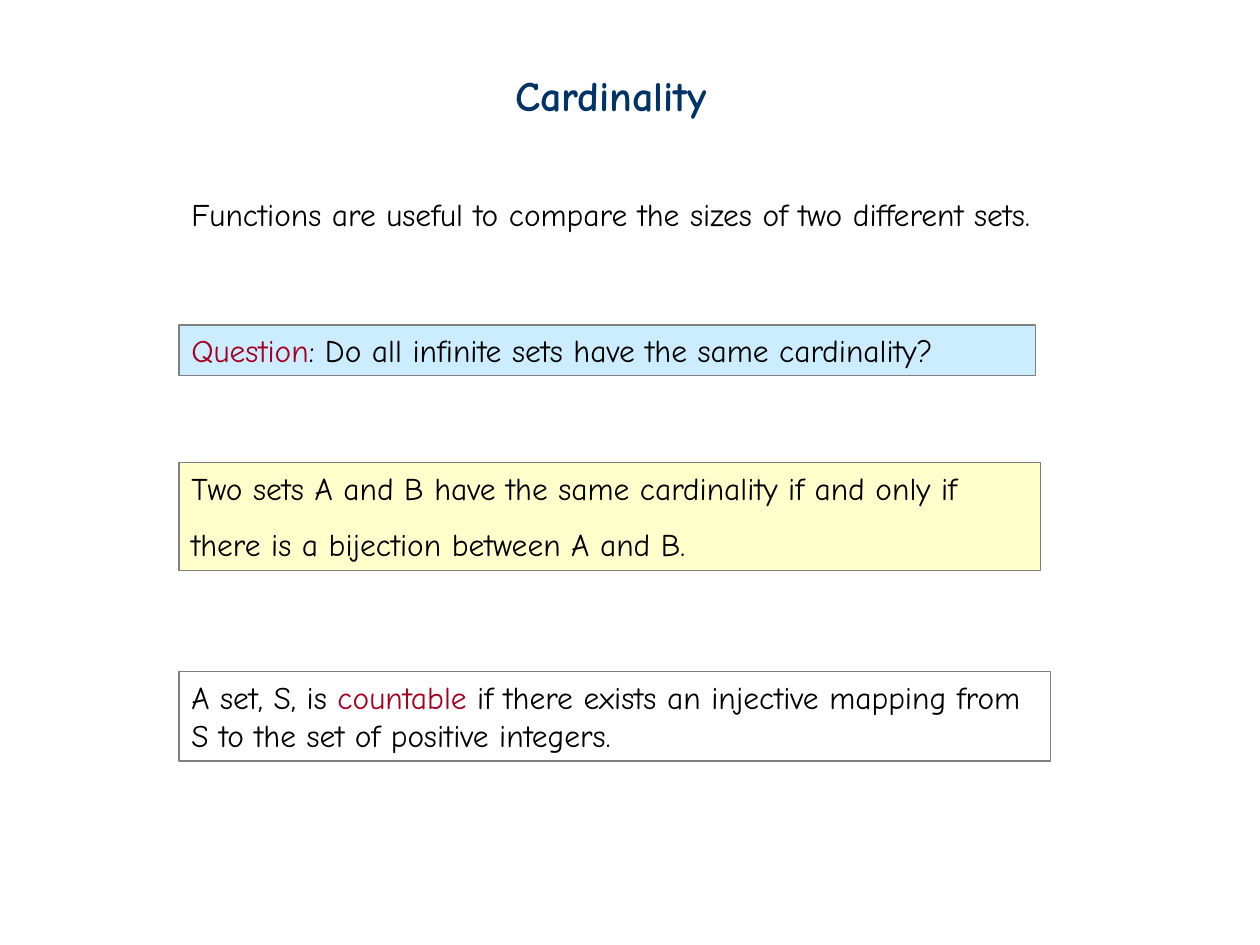
from pptx import Presentation
from pptx.dml.color import RGBColor
from pptx.enum.shapes import MSO_SHAPE as Shape
from pptx.enum.text import MSO_ANCHOR as Anchor, MSO_AUTO_SIZE as AutoSize, PP_ALIGN as Align
from pptx.util import Inches, Pt

NAVY, RED, BLACK, GRAY = "003366", "A50021", "000000", "808080"
LEFT = 1.42
TITLE = [[("Cardinality", NAVY)]]
INTRO = [[("Functions are useful to compare the sizes of two different sets.", BLACK)]]
STATEMENTS = [
    {"top": 2.58, "size": (6.8, 0.4), "fill": "CCECFF", "lines": [
        [("Question", RED), (": Do all infinite sets have the same cardinality?", BLACK)]]},
    {"top": 3.67, "size": (6.84, 0.86), "fill": "FFFFCC", "lines": [
        [("Two sets A and B have the same cardinality if and only if", BLACK)],
        [("there is a bijection between A and B.", BLACK)]]},
    {"top": 5.33, "size": (6.92, 0.71), "fill": None, "lines": [
        [("A set, S, is ", BLACK), ("countable", RED),
         (" if there exists an injective mapping from S to the set of positive integers.", BLACK)]]},
]
FRAME = {"word_wrap": True, "auto_size": AutoSize.NONE, "vertical_anchor": Anchor.TOP}
BODY_FONT = {"name": "Comic Neue", "size": Pt(18), "bold": False}
TITLE_FONT = {**BODY_FONT, "size": Pt(24), "bold": True}


def paint(color_format, value):
    """Apply a hex colour to a colour format."""
    color_format.rgb = RGBColor.from_string(value)


def apply(target, values):
    """Set every attribute in a dict of format values."""
    for key, value in values.items():
        setattr(target, key, value)


def write(holder, lines, font):
    """Fill a text holder with lines of coloured runs."""
    frame = holder.text_frame
    apply(frame, FRAME)
    for index, line in enumerate(lines):
        paragraph = frame.add_paragraph() if index else frame.paragraphs[0]
        apply(paragraph, {"alignment": Align.LEFT, "line_spacing": 1.5 if index else 1.0})
        for wording, color in line:
            run = paragraph.add_run()
            run.text = wording
            apply(run.font, font)
            paint(run.font.color, color)


def add_statement(slide, top, size, fill, lines):
    """Draw one framed statement."""
    statement = slide.shapes.add_shape(
        Shape.RECTANGLE, *map(Inches, (LEFT, top, *size)))
    statement.shadow.inherit = False
    if fill:
        statement.fill.solid()
        paint(statement.fill.fore_color, fill)
    else:
        statement.fill.background()
    paint(statement.line.color, GRAY)
    statement.line.width = Pt(0.75)
    write(statement, lines, BODY_FONT)


def main():
    """Build and save the slide."""
    deck = Presentation()
    apply(deck, {"slide_width": Inches(10), "slide_height": Inches(7.5)})
    slide = deck.slides.add_slide(deck.slide_layouts[5])
    title = slide.shapes.title
    apply(title, {"left": Inches(3.99), "top": Inches(0.5),
                  "width": Inches(1.93), "height": Inches(0.5)})
    write(title, TITLE, TITLE_FONT)
    intro = slide.shapes.add_textbox(*map(Inches, (LEFT, 1.5, 7.72, 0.4)))
    write(intro, INTRO, BODY_FONT)
    for statement in STATEMENTS:
        add_statement(slide, **statement)
    deck.save("out.pptx")


if __name__ == "__main__":
    main()
